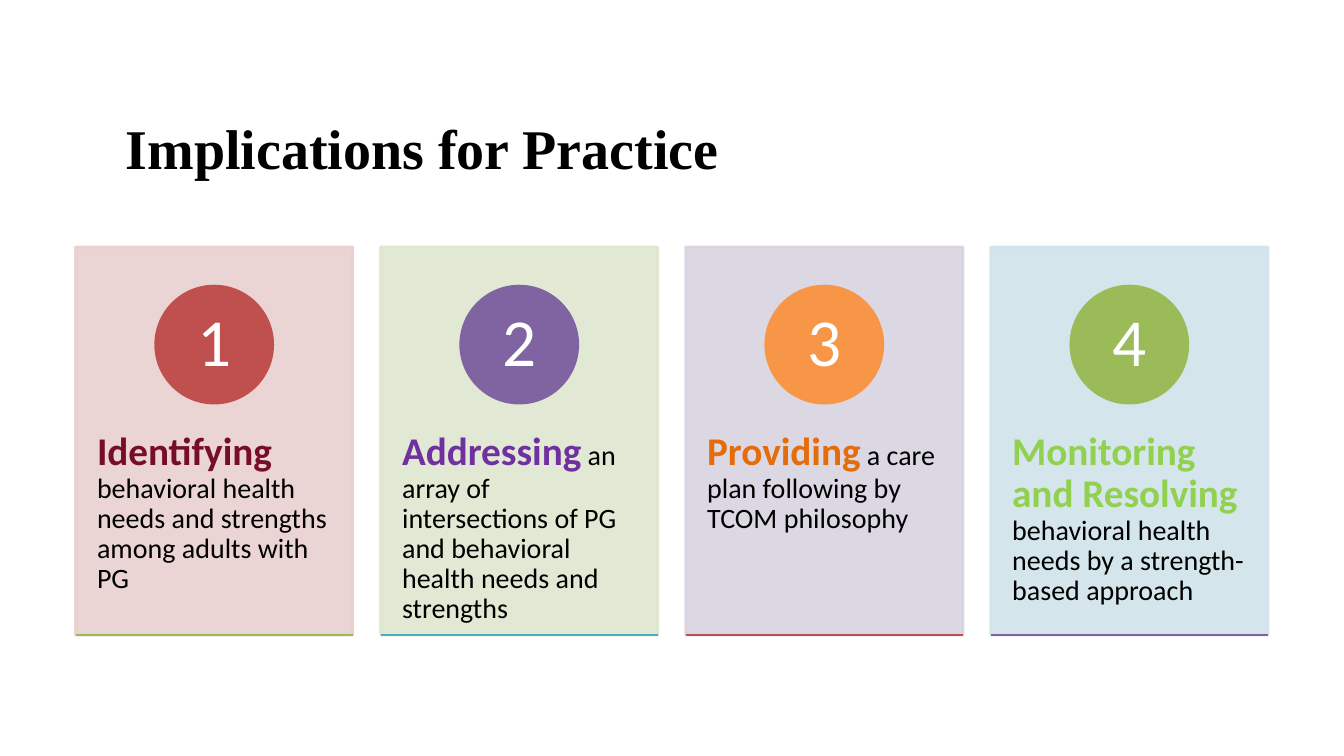
from lxml import etree
from pptx import Presentation
from pptx.dml.color import RGBColor
from pptx.enum.shapes import MSO_CONNECTOR as CONNECTOR, MSO_SHAPE as SHAPE
from pptx.enum.text import MSO_ANCHOR as ANCHOR, PP_ALIGN as ALIGN
from pptx.oxml.ns import qn
from pptx.util import Pt

COLORS = {
    "black": "000000", "white": "FFFFFF",
    "red": "C0504D", "purple": "8064A2", "orange": "F79646",
    "green": "9BBB59", "teal": "4BACC6",
    "pale red": "E8D0D0", "pale green": "DEE7D1",
    "pale purple": "D8D3E0", "pale blue": "D0E3EA",
    "maroon": "770D29", "violet": "7030A0",
    "dark orange": "E46C0A", "lime": "92D050",
}

# (heading, rest of text, heading color, panel, circle, base line)
CARDS = [
    ("Identifying", " behavioral health needs and strengths among adults with PG",
     "maroon", "pale red", "red", "green"),
    ("Addressing", " an array of intersections of PG and behavioral health needs and strengths",
     "violet", "pale green", "purple", "teal"),
    ("Providing", " a care plan following by TCOM philosophy",
     "dark orange", "pale purple", "orange", "red"),
    ("Monitoring and Resolving", " behavioral health needs by a strength-based approach",
     "lime", "pale blue", "green", "purple"),
]
CARD_WIDTH, CARD_HEIGHT, CARD_PITCH = 198, 277.2, 217.9
CARDS_LEFT, CARDS_TOP = 54, 176.4
CIRCLE_SIZE = 83.5


def rgb(name):
    return RGBColor.from_string(COLORS[name])


def write(shape, runs, align=ALIGN.LEFT, anchor=ANCHOR.TOP, margins=(0, 0), spacing=0.9):
    """Fill the shape with one paragraph of (text, size, color, bold, font) runs."""
    frame = shape.text_frame
    frame.word_wrap = True
    frame.vertical_anchor = anchor
    frame.margin_left = frame.margin_right = Pt(margins[0])
    frame.margin_top = frame.margin_bottom = Pt(margins[1])
    paragraph = frame.paragraphs[0]
    paragraph.alignment = align
    paragraph.line_spacing = spacing
    for text, size, color, bold, font in runs:
        run = paragraph.add_run()
        run.text = text
        run.font.size = Pt(size)
        run.font.bold = bold
        run.font.name = font
        run.font.color.rgb = rgb(color)


def add_filled(slide, kind, box, color, opacity=100):
    shape = slide.shapes.add_shape(kind, *map(Pt, box))
    shape.shadow.inherit = False
    shape.fill.solid()
    shape.fill.fore_color.rgb = rgb(color)
    shape.line.color.rgb = rgb(color)
    shape.line.width = Pt(2)
    if opacity < 100:
        for element in shape.element.spPr.iter(qn("a:srgbClr")):
            etree.SubElement(element, qn("a:alpha"), val=str(opacity * 1000))
    return shape


def add_base_line(slide, left, top, width, color):
    line = slide.shapes.add_connector(
        CONNECTOR.STRAIGHT, Pt(left), Pt(top), Pt(left + width), Pt(top))
    line.line.color.rgb = rgb(color)
    line.line.width = Pt(2)
    etree.SubElement(line.element.spPr, qn("a:effectLst"))


def add_title(slide, left, top, width, height):
    title = slide.shapes.title
    title.left, title.top, title.width, title.height = map(Pt, (left, top, width, height))
    write(title, [("Implications for Practice", 40, "black", True, "Times New Roman")],
          anchor=ANCHOR.MIDDLE, spacing=1.0)


def add_card(slide, box, number, card):
    left, top, width, height = box
    heading, body, heading_color, panel_color, circle_color, line_color = card
    add_filled(slide, SHAPE.RECTANGLE, box, panel_color, opacity=90)
    text_box = slide.shapes.add_textbox(Pt(left), Pt(top + 105.8), Pt(width), Pt(166.3))
    write(text_box, [(heading, 28, heading_color, True, "Calibri"),
                     (body, 20, "black", False, "Calibri")], margins=(15.3, 26))
    circle_left = left + (width - CIRCLE_SIZE) / 2
    circle = add_filled(slide, SHAPE.OVAL,
                        (circle_left, top + 28, CIRCLE_SIZE, CIRCLE_SIZE), circle_color)
    write(circle, [(str(number), 48, "white", False, "Calibri")],
          align=ALIGN.CENTER, anchor=ANCHOR.MIDDLE)
    add_base_line(slide, left, top + height, width, line_color)


def main():
    presentation = Presentation()
    presentation.slide_width, presentation.slide_height = Pt(960), Pt(540)
    slide = presentation.slides.add_slide(presentation.slide_layouts[5])
    add_title(slide, 90, 78, 780, 54)
    for index, card in enumerate(CARDS):
        box = (CARDS_LEFT + index * CARD_PITCH, CARDS_TOP, CARD_WIDTH, CARD_HEIGHT)
        add_card(slide, box, index + 1, card)
    presentation.save("out.pptx")


if __name__ == "__main__":
    main()
